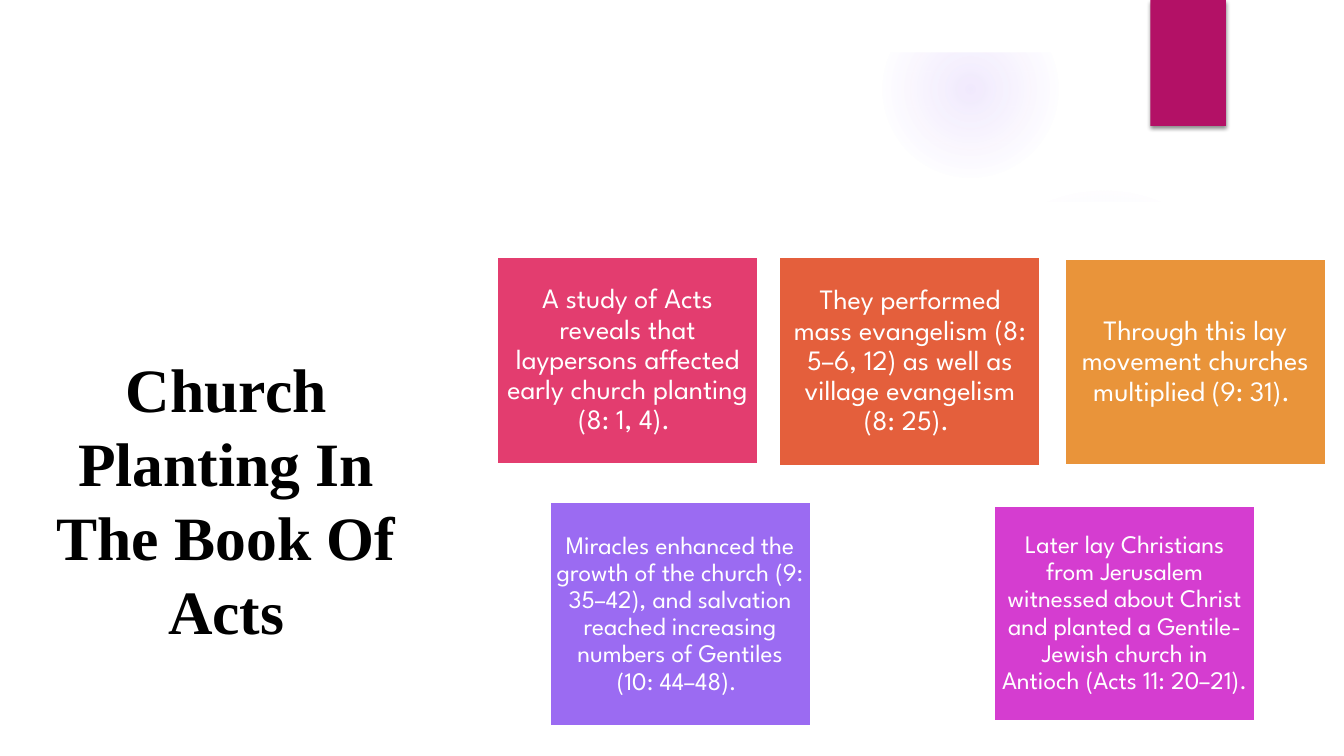
from lxml import etree
from pptx import Presentation
from pptx.dml.color import RGBColor
from pptx.enum.shapes import MSO_SHAPE
from pptx.enum.text import MSO_ANCHOR, PP_ALIGN
from pptx.oxml import parse_xml
from pptx.oxml.ns import nsdecls, qn
from pptx.util import Inches, Pt

RECT, OVAL = MSO_SHAPE.RECTANGLE, MSO_SHAPE.OVAL
MIDDLE, CENTER = MSO_ANCHOR.MIDDLE, PP_ALIGN.CENTER

WIDTH, HEIGHT = 13.33, 7.5
COLORS = {
    "white": "FFFFFF", "black": "000000", "tab": "B31166",
    "rose": "E33D6F", "coral": "E45F3C", "amber": "E9943A",
    "violet": "9B6BF2", "orchid": "D53DD0",
}
TITLE = "Church Planting In The Book Of Acts"
CARD_WIDTH = 2.59
# text, colour, left, top, height, text size, inset
CARDS = [
    ("A study of Acts reveals that laypersons affected early church planting (8: 1, 4). ",
     "rose", 4.93, 2.55, 2.05, 20, 0.08),
    ("They performed mass evangelism (8: 5–6, 12) as well as village evangelism (8: 25). ",
     "coral", 7.73, 2.55, 2.07, 20, 0.08),
    ("Through this lay movement churches multiplied (9: 31). ",
     "amber", 10.56, 2.57, 2.04, 20, 0.08),
    ("Miracles enhanced the growth of the church (9: 35–42), and salvation reached "
     "increasing numbers of Gentiles (10: 44–48). ",
     "violet", 5.45, 4.98, 2.22, 18, 0.07),
    ("Later lay Christians from Jerusalem witnessed about Christ and planted a "
     "Gentile-Jewish church in Antioch (Acts 11: 20–21). ",
     "orchid", 9.86, 5.02, 2.13, 18, 0.07),
]
# left, top, diameter, (position %, opacity %) stops
GLOWS = [
    (9.41, 1.83, 3.08, [(0, 7), (36, 6), (69, 0)]),
    (8.75, 0.01, 1.75, [(0, 14), (36, 7), (73, 0)]),
]
PANEL = [(0.5, 2.04), (2.16, 2.24), (4.01, 2.38), (6.82, 2.48), (8.4, 2.46),
         (9.49, 2.41), (10.6, 2.32), (11.72, 2.2), (12.84, 2.04), (12.84, 7), (0.5, 7)]
TOP_MARGIN = 0.52


def color(name):
    return RGBColor.from_string(COLORS[name])


def paint(shape, fill, line=None):
    shape.shadow.inherit = False
    shape.fill.solid()
    shape.fill.fore_color.rgb = color(fill)
    if line:
        shape.line.color.rgb = color(line)
        shape.line.width = Pt(1.5)
    else:
        shape.line.fill.background()
    return shape


def add_block(slide, kind, left, top, width, height, fill, line=None):
    box = slide.shapes.add_shape(kind, *map(Inches, (left, top, width, height)))
    return paint(box, fill, line)


def write(shape, text, *, font, size, ink, bold=False, inset=None, spacing=None):
    frame = shape.text_frame
    frame.word_wrap = True
    frame.vertical_anchor = MIDDLE
    if inset is not None:
        frame.margin_left = frame.margin_right = Inches(inset)
        frame.margin_top = frame.margin_bottom = Inches(inset)
    paragraph = frame.paragraphs[0]
    paragraph.alignment = CENTER
    if spacing:
        paragraph.line_spacing = spacing
    run = paragraph.add_run()
    run.text = text
    run.font.name, run.font.size, run.font.bold = font, Pt(size), bold
    run.font.color.rgb = color(ink)


def add_glow(slide, left, top, diameter, stops):
    """Add a circle that fades out from its centre."""
    glow = add_block(slide, OVAL, left, top, diameter, diameter, "violet")
    stop_xml = "".join(
        f'<a:gs pos="{pos * 1000}"><a:srgbClr val="{COLORS["violet"]}">'
        f'<a:alpha val="{opacity * 1000}"/></a:srgbClr></a:gs>'
        for pos, opacity in stops)
    gradient = parse_xml(
        f'<a:gradFill {nsdecls("a")}><a:gsLst>{stop_xml}</a:gsLst><a:path path="circle">'
        '<a:fillToRect l="50000" t="50000" r="50000" b="50000"/></a:path></a:gradFill>')
    properties = glow.fill._xPr
    properties.replace(properties.find(qn("a:solidFill")), gradient)


def add_shadow(shape):
    effects = shape.fill._xPr.find(qn("a:effectLst"))
    shadow = etree.SubElement(effects, qn("a:outerShdw"), blurRad=str(Pt(3)),
                              dist=str(Pt(2)), dir="5400000", rotWithShape="0")
    ink = etree.SubElement(shadow, qn("a:srgbClr"), val=COLORS["black"])
    etree.SubElement(ink, qn("a:alpha"), val="45000")


def main():
    deck = Presentation()
    deck.slide_width, deck.slide_height = Inches(WIDTH), Inches(HEIGHT)
    slide = deck.slides.add_slide(deck.slide_layouts[6])

    for glow in GLOWS:
        add_glow(slide, *glow)
    panel = slide.shapes.build_freeform(*PANEL[0], scale=Inches(1))
    panel.add_line_segments(PANEL[1:], close=True)
    paint(panel.convert_to_shape(), "white")
    add_block(slide, RECT, 0, 0, WIDTH, TOP_MARGIN, "white")
    add_shadow(add_block(slide, RECT, 11.41, 0, 0.75, HEIGHT / 6, "tab"))

    title = slide.shapes.add_textbox(*map(Inches, (0.41, 2.76, 3.67, 4.38)))
    write(title, TITLE, font="Times New Roman", size=44, ink="black", bold=True)

    for text, fill, left, top, height, size, inset in CARDS:
        card = add_block(slide, RECT, left, top, CARD_WIDTH, height, fill, "white")
        write(card, text, font="League Spartan", size=size, ink="white",
              inset=inset, spacing=0.9)
    deck.save("out.pptx")


if __name__ == "__main__":
    main()
